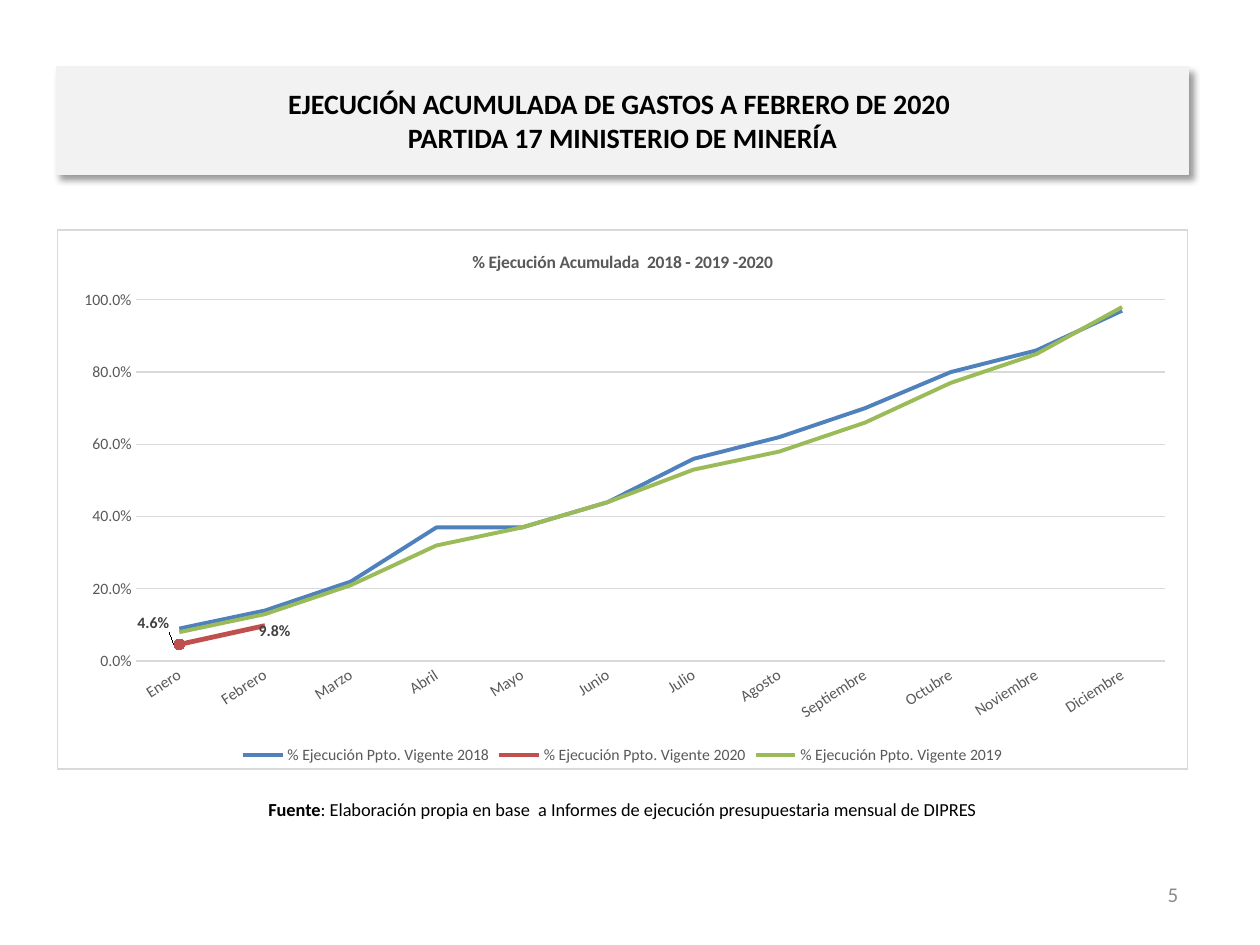
import lxml.etree
import pptx
import pptx.chart.data
import pptx.dml.color
import pptx.enum.chart
import pptx.enum.text
import pptx.oxml
import pptx.oxml.ns
import pptx.util

Pt = pptx.util.Pt
RGBColor = pptx.dml.color.RGBColor
ALIGN = pptx.enum.text.PP_ALIGN
MIDDLE = pptx.enum.text.MSO_ANCHOR.MIDDLE
LABEL = pptx.enum.chart.XL_LABEL_POSITION
NO_TICK = pptx.enum.chart.XL_TICK_MARK.NONE
qn = pptx.oxml.ns.qn

BLACK = RGBColor(0x00, 0x00, 0x00)
WHITE = RGBColor(0xFF, 0xFF, 0xFF)
BAND = RGBColor(0xF2, 0xF2, 0xF2)
GRID = RGBColor(0xD9, 0xD9, 0xD9)
AXIS_TEXT = RGBColor(0x59, 0x59, 0x59)
LABEL_TEXT = RGBColor(0x40, 0x40, 0x40)
PAGE_TEXT = RGBColor(0x8C, 0x8C, 0x8C)
BLUE = RGBColor(0x4F, 0x81, 0xBD)
RED = RGBColor(0xC0, 0x50, 0x4D)
GREEN = RGBColor(0x9B, 0xBB, 0x59)

LEFT, WIDTH = Pt(32.4), Pt(646.6)
PERCENT = "0.0%"


def set_font(font, size=9, color=AXIS_TEXT, bold=False):
    font.name = "Calibri"
    font.size = Pt(size)
    font.bold = bold
    font.color.rgb = color


def add_text(paragraph, text, align=ALIGN.CENTER, **font_format):
    """Add a run to the paragraph; font_format goes to set_font."""
    paragraph.alignment = align
    run = paragraph.add_run()
    run.text = text
    set_font(run.font, **font_format)


prs = pptx.Presentation()
prs.slide_width, prs.slide_height = Pt(720), Pt(540)
slide = prs.slides.add_slide(prs.slide_layouts[5])

# Heading band
heading = slide.shapes.title
heading.left, heading.top, heading.width, heading.height = LEFT, Pt(38.3), WIDTH, Pt(61.2)
heading.fill.solid()
heading.fill.fore_color.rgb = BAND
heading.line.color.rgb = BAND
heading.line.width = Pt(0.75)
heading._element.spPr.append(pptx.oxml.parse_xml(
    f'<a:effectLst {pptx.oxml.ns.nsdecls("a")}>'
    f'<a:outerShdw blurRad="{Pt(4)}" dist="{Pt(3)}" dir="2700000" algn="tl" rotWithShape="0">'
    '<a:srgbClr val="000000"><a:alpha val="40000"/></a:srgbClr>'
    '</a:outerShdw></a:effectLst>'))
frame = heading.text_frame
frame.auto_size = pptx.enum.text.MSO_AUTO_SIZE.NONE
frame.vertical_anchor = MIDDLE
heading_line = frame.paragraphs[0]
add_text(heading_line, "EJECUCIÓN ACUMULADA DE GASTOS A FEBRERO DE 2020 ", size=16, color=BLACK, bold=True)
heading_line.add_line_break()
add_text(heading_line, "PARTIDA 17 MINISTERIO DE MINERÍA", size=16, color=BLACK, bold=True)

# Accumulated execution chart
execution = [
    ("% Ejecución Ppto. Vigente 2018", BLUE, 2.25,
     (0.09, 0.14, 0.22, 0.37, 0.37, 0.44, 0.56, 0.62, 0.7, 0.8, 0.86, 0.97)),
    ("% Ejecución Ppto. Vigente 2020", RED, 2.75, (0.046, 0.098)),
    ("% Ejecución Ppto. Vigente 2019", GREEN, 2.25,
     (0.08, 0.13, 0.21, 0.32, 0.37, 0.44, 0.53, 0.58, 0.66, 0.77, 0.85, 0.98)),
]
data = pptx.chart.data.CategoryChartData(number_format=PERCENT)
data.categories = ["Enero", "Febrero", "Marzo", "Abril", "Mayo", "Junio", "Julio",
                   "Agosto", "Septiembre", "Octubre", "Noviembre", "Diciembre"]
for name, _, _, values in execution:
    data.add_series(name, values)
chart = slide.shapes.add_chart(pptx.enum.chart.XL_CHART_TYPE.LINE,
                               LEFT, Pt(131), WIDTH, Pt(308.9), data).chart
set_font(chart.font, size=10, color=BLACK)
chart.has_title = True
add_text(chart.chart_title.text_frame.paragraphs[0], "% Ejecución Acumulada  2018 - 2019 -2020",
         size=10, bold=True)
chart.chart_title.include_in_layout = False
chart.has_legend = True
chart.legend.position = pptx.enum.chart.XL_LEGEND_POSITION.BOTTOM
chart.legend.include_in_layout = False
set_font(chart.legend.font)

months, share = chart.category_axis, chart.value_axis
for axis in (months, share):
    axis.major_tick_mark = axis.minor_tick_mark = NO_TICK
    set_font(axis.tick_labels.font)
months.format.line.color.rgb = GRID
months.format.line.width = Pt(1)
months._element.find(qn("c:txPr")).find(qn("a:bodyPr")).set("rot", "-1980000")
share.minimum_scale, share.maximum_scale, share.major_unit = 0, 1, 0.2
share.format.line.fill.background()
share.major_gridlines.format.line.color.rgb = GRID
share.major_gridlines.format.line.width = Pt(0.75)
share.tick_labels.number_format = PERCENT
share.tick_labels.number_format_is_linked = False

plot = chart.plots[0]
plot.vary_by_categories = False
for series, (_, color, weight, _) in zip(plot.series, execution):
    series.smooth = False
    series.marker.style = pptx.enum.chart.XL_MARKER_STYLE.NONE
    series.format.line.color.rgb = color
    series.format.line.width = Pt(weight)

# Marker and labels of the current year
current = plot.series[1]
january = current.points[0]
january.marker.style = pptx.enum.chart.XL_MARKER_STYLE.CIRCLE
january.marker.size = 6
january.marker.format.fill.solid()
january.marker.format.fill.fore_color.rgb = RED
january.marker.format.line.color.rgb = RED
january.format.line.color.rgb = RED
january.format.line.width = Pt(2.75)
labels = current.data_labels
labels.show_value = True
labels.number_format = PERCENT
labels.number_format_is_linked = False
set_font(labels.font, color=LABEL_TEXT, bold=True)
chart_ns = pptx.oxml.ns.nsdecls("c")
for month, position, dx, dy in ((0, LABEL.LEFT, 0, -0.04), (1, LABEL.RIGHT, -0.01, 0.01)):
    label = current.points[month].data_label
    set_font(label.font, color=LABEL_TEXT, bold=True)
    label.position = position
    label._dLbl.find(qn("c:idx")).addnext(pptx.oxml.parse_xml(
        f'<c:layout {chart_ns}><c:manualLayout><c:x val="{dx}"/><c:y val="{dy}"/>'
        '</c:manualLayout></c:layout>'))

# Plot area position, chart background and border
plot_area = chart._chartSpace.chart.plotArea
for layout in plot_area.findall(qn("c:layout")):
    plot_area.remove(layout)
plot_area.insert(0, pptx.oxml.parse_xml(
    f'<c:layout {chart_ns}><c:manualLayout><c:layoutTarget val="inner"/>'
    '<c:xMode val="edge"/><c:yMode val="edge"/><c:x val="0.07"/><c:y val="0.13"/>'
    '<c:w val="0.91"/><c:h val="0.67"/></c:manualLayout></c:layout>'))
chart._chartSpace.chart.addnext(pptx.oxml.parse_xml(
    f'<c:spPr {pptx.oxml.ns.nsdecls("c", "a")}>'
    f'<a:solidFill><a:srgbClr val="{WHITE}"/></a:solidFill>'
    f'<a:ln w="{Pt(0.75)}"><a:solidFill><a:srgbClr val="{GRID}"/></a:solidFill></a:ln></c:spPr>'))

# Source note and page number
notes = [
    ((77.8, 447.8, 555.8, 28.8), ALIGN.CENTER, 10.5, BLACK,
     [("Fuente", True),
      (": Elaboración propia en base  a Informes de ejecución presupuestaria mensual de DIPRES", False)]),
    ((512.6, 496.8, 167.8, 28.8), ALIGN.RIGHT, 12, PAGE_TEXT, [("5", False)]),
]
for place, align, size, color, parts in notes:
    frame = slide.shapes.add_textbox(*map(Pt, place)).text_frame
    frame.word_wrap = True
    frame.vertical_anchor = MIDDLE
    for text, bold in parts:
        add_text(frame.paragraphs[0], text, align=align, size=size, color=color, bold=bold)

prs.save("out.pptx")
